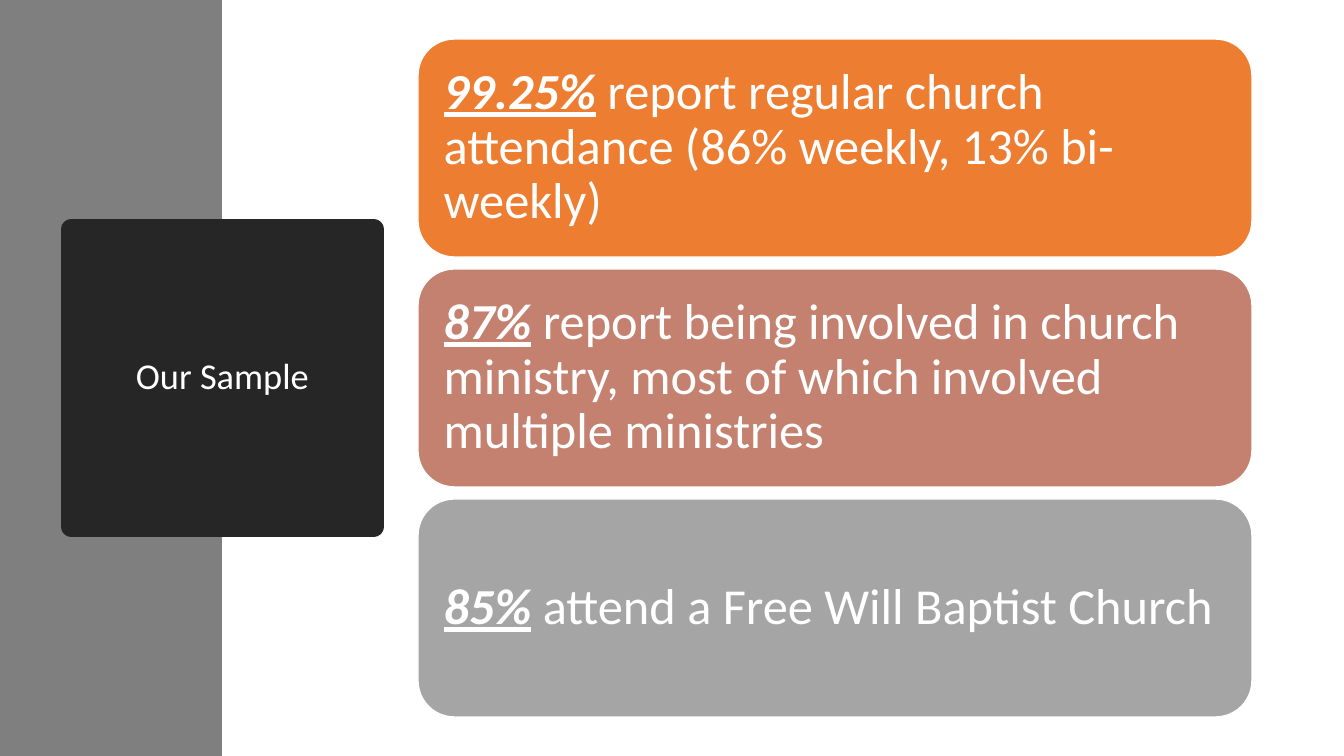
from pptx import Presentation
from pptx.dml.color import RGBColor as RGB
from pptx.enum.shapes import MSO_SHAPE as SHAPE
from pptx.enum.text import MSO_ANCHOR as ANCHOR, MSO_AUTO_SIZE as FIT, PP_ALIGN as ALIGN
from pptx.util import Emu, Pt

THEME = {
    "font": "Calibri", "title": 26, "body": 36,
    "white": "FFFFFF", "band": "7F7F7F", "dark": "262626",
    "cards": ["ED7D31", "C48170", "A5A5A5"],
}
FACTS = [
    ("99.25%", " report regular church attendance (86% weekly, 13% bi-weekly)"),
    ("87%", " report being involved in church ministry, "
            "most of which involved multiple ministries"),
    ("85%", " attend a Free Will Baptist Church"),
]


def px(*nums):
    """Turn pixels, 1344 across the slide, into EMU."""
    return [Emu(round(n * 12192000 / 1344)) for n in nums]


def write(box, align, size, *runs):
    """Fill a box with one paragraph of (text, strong) runs."""
    frame = box.text_frame
    frame.word_wrap = True
    frame.auto_size = FIT.NONE
    frame.vertical_anchor = ANCHOR.MIDDLE
    para = frame.paragraphs[0]
    para.alignment = align
    para.line_spacing = 0.9
    for text, strong in runs:
        run = para.add_run()
        run.text = text
        font = run.font
        font.name, font.size = THEME["font"], Pt(size)
        font.color.rgb = RGB.from_string(THEME["white"])
        font.bold = font.italic = font.underline = strong


deck = Presentation()
deck.slide_width, deck.slide_height = px(1344, 756)
slide = deck.slides.add_slide(deck.slide_layouts[5])
shapes = slide.shapes

# Side band, kept behind the title
band = shapes.add_shape(SHAPE.RECTANGLE, *px(0, 0, 222, 756))
band.shadow.inherit = False
band.fill.solid()
band.fill.fore_color.rgb = RGB.from_string(THEME["band"])
band.line.fill.background()

title = shapes.title
band._element.addnext(title._element)
title.left, title.top, title.width, title.height = px(71, 229, 303, 298)
dark = RGB.from_string(THEME["dark"])
title.fill.solid()
title.fill.fore_color.rgb = dark
title.line.color.rgb = dark
title.line.width = Pt(13.75)
write(title, ALIGN.CENTER, THEME["title"], ("Our Sample", False))

# Fact cards at an equal pitch
for row, ((share, rest), tint) in enumerate(zip(FACTS, THEME["cards"])):
    card = shapes.add_shape(SHAPE.ROUNDED_RECTANGLE, *px(418, 39 + 230 * row, 834, 218))
    card.shadow.inherit = False
    card.fill.solid()
    card.fill.fore_color.rgb = RGB.from_string(tint)
    card.line.color.rgb = RGB.from_string(THEME["white"])
    card.line.width = Pt(1)
    frame = card.text_frame
    (frame.margin_left, frame.margin_top,
     frame.margin_right, frame.margin_bottom) = px(15, 15, 15, 15)
    write(card, ALIGN.LEFT, THEME["body"], (share, True), (rest, False))

deck.save("out.pptx")
